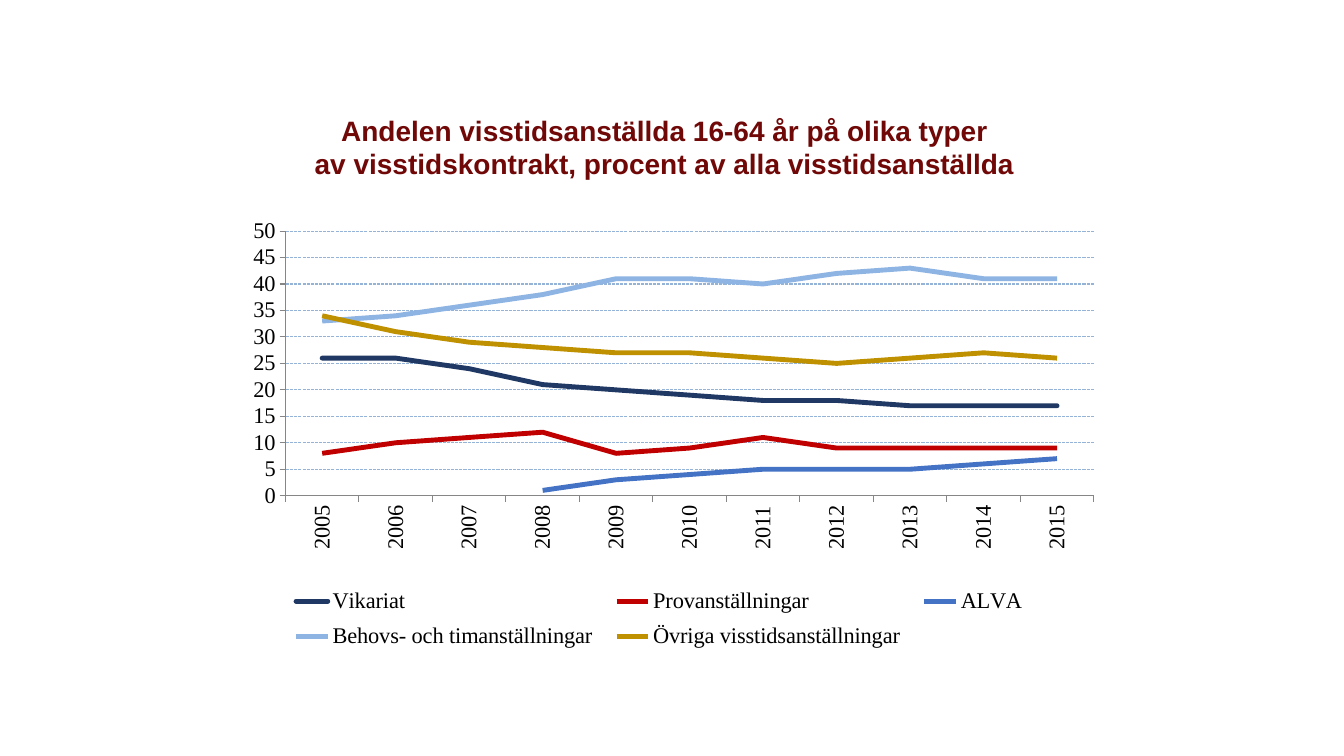
from dataclasses import dataclass
from typing import Optional

from lxml import etree
from pptx import Presentation
from pptx import util as u
from pptx.chart.data import CategoryChartData
from pptx.dml.color import RGBColor
from pptx.enum import chart as ch, dml, text
from pptx.oxml.ns import qn

COLORS = {
    "title": "700808",
    "text": "000000",
    "axis": "868686",
    "grid": "95B3D7",
    "navy": "203864",
    "red": "C00000",
    "blue": "4472C4",
    "light": "8EB4E3",
    "gold": "BF9000",
}
YEARS = range(2005, 2016)


@dataclass
class Series:
    name: str
    color: str
    values: list[Optional[int]]
    round_cap: bool = False


SERIES = [
    Series("Vikariat", "navy", [26, 26, 24, 21, 20, 19, 18, 18, 17, 17, 17], True),
    Series("Provanställningar", "red", [8, 10, 11, 12, 8, 9, 11, 9, 9, 9, 9]),
    Series("ALVA", "blue", [None, None, None, 1, 3, 4, 5, 5, 5, 6, 7]),
    Series("Behovs- och timanställningar", "light",
           [33, 34, 36, 38, 41, 41, 40, 42, 43, 41, 41]),
    Series("Övriga visstidsanställningar", "gold",
           [34, 31, 29, 28, 27, 27, 26, 25, 26, 27, 26]),
]


def rgb(name: str) -> RGBColor:
    return RGBColor.from_string(COLORS[name])


def format_font(font, *, size: float, name: str, color: str, bold: bool = False) -> None:
    font.size = u.Pt(size)
    font.name = name
    font.bold = bold
    font.color.rgb = rgb(color)


def write_text(tf, content: str, *, align=text.PP_ALIGN.CENTER, **font_format) -> None:
    tf.word_wrap = True
    tf.auto_size = text.MSO_AUTO_SIZE.NONE
    tf.vertical_anchor = text.MSO_ANCHOR.TOP
    p = tf.paragraphs[0]
    p.text = content
    p.alignment = align
    for r in p.runs:
        format_font(r.font, **font_format)


def format_line(line, color: str, width: float) -> None:
    line.color.rgb = rgb(color)
    line.width = u.Pt(width)


def set_layout(parent, index: int, x: float, y: float, w: float, h: float,
               inner: bool = False) -> None:
    for old in parent.findall(qn("c:layout")):
        parent.remove(old)
    layout = etree.Element(qn("c:layout"))
    parent.insert(index, layout)
    manual = etree.SubElement(layout, qn("c:manualLayout"))
    entries = [("layoutTarget", "inner")] if inner else []
    entries += [("xMode", "edge"), ("yMode", "edge"),
                ("x", x), ("y", y), ("w", w), ("h", h)]
    for tag, value in entries:
        etree.SubElement(manual, qn(f"c:{tag}")).set("val", str(value))


def format_axes(chart) -> None:
    for axis in (chart.category_axis, chart.value_axis):
        axis.major_tick_mark = ch.XL_TICK_MARK.OUTSIDE
        axis.minor_tick_mark = ch.XL_TICK_MARK.NONE
        format_line(axis.format.line, "axis", 0.75)
    years = chart.category_axis
    years.tick_label_position = ch.XL_TICK_LABEL_POSITION.LOW
    format_font(years.tick_labels.font, size=16, name="Times New Roman", color="text")
    body = years._element.find(qn("c:txPr")).find(qn("a:bodyPr"))
    body.set("rot", "-5400000")
    body.set("vert", "horz")
    percent = chart.value_axis
    percent.minimum_scale = 0
    percent.maximum_scale = 50
    percent.major_unit = 5
    percent.has_major_gridlines = True
    grid = percent.major_gridlines.format.line
    format_line(grid, "grid", 0.75)
    grid.dash_style = dml.MSO_LINE.SQUARE_DOT
    grid._ln.find(qn("a:prstDash")).set("val", "sysDash")


def add_line_chart(s) -> None:
    data = CategoryChartData(number_format="General")
    data.categories = [str(year) for year in YEARS]
    for item in SERIES:
        data.add_series(item.name, item.values)
    chart = s.shapes.add_chart(ch.XL_CHART_TYPE.LINE, u.Cm(5.94), u.Cm(5.05),
                               u.Cm(22), u.Cm(11.91), data).chart
    chart.has_title = False
    format_font(chart.font, size=16, name="Times New Roman", color="text")
    plot = chart.plots[0]
    plot.vary_by_categories = False
    for item, series in zip(SERIES, plot.series):
        series.smooth = False
        series.marker.style = ch.XL_MARKER_STYLE.NONE
        format_line(series.format.line, item.color, 3.5)
        if item.round_cap:
            series.format.line._ln.set("cap", "rnd")
    format_axes(chart)
    chart.has_legend = True
    chart.legend.position = ch.XL_LEGEND_POSITION.BOTTOM
    chart.legend.include_in_layout = False
    set_layout(chart._chartSpace.chart.plotArea, 0, 0.057, 0.065, 0.926, 0.56, inner=True)
    set_layout(chart.legend._element, 1, 0.05, 0.8, 0.87, 0.17)


def main() -> None:
    prs = Presentation()
    prs.slide_width, prs.slide_height = u.Cm(33.87), u.Cm(19.05)
    s = prs.slides.add_slide(prs.slide_layouts[5])
    sp = s.shapes.title
    sp.left, sp.top, sp.width, sp.height = u.Cm(5.51), u.Cm(2.72), u.Cm(22.48), u.Cm(3.18)
    write_text(sp.text_frame,
               "Andelen visstidsanställda 16-64 år på olika typer\v"
               "av visstidskontrakt, procent av alla visstidsanställda",
               size=20, name="Arial", color="title", bold=True)
    add_line_chart(s)
    prs.save("out.pptx")


if __name__ == "__main__":
    main()
